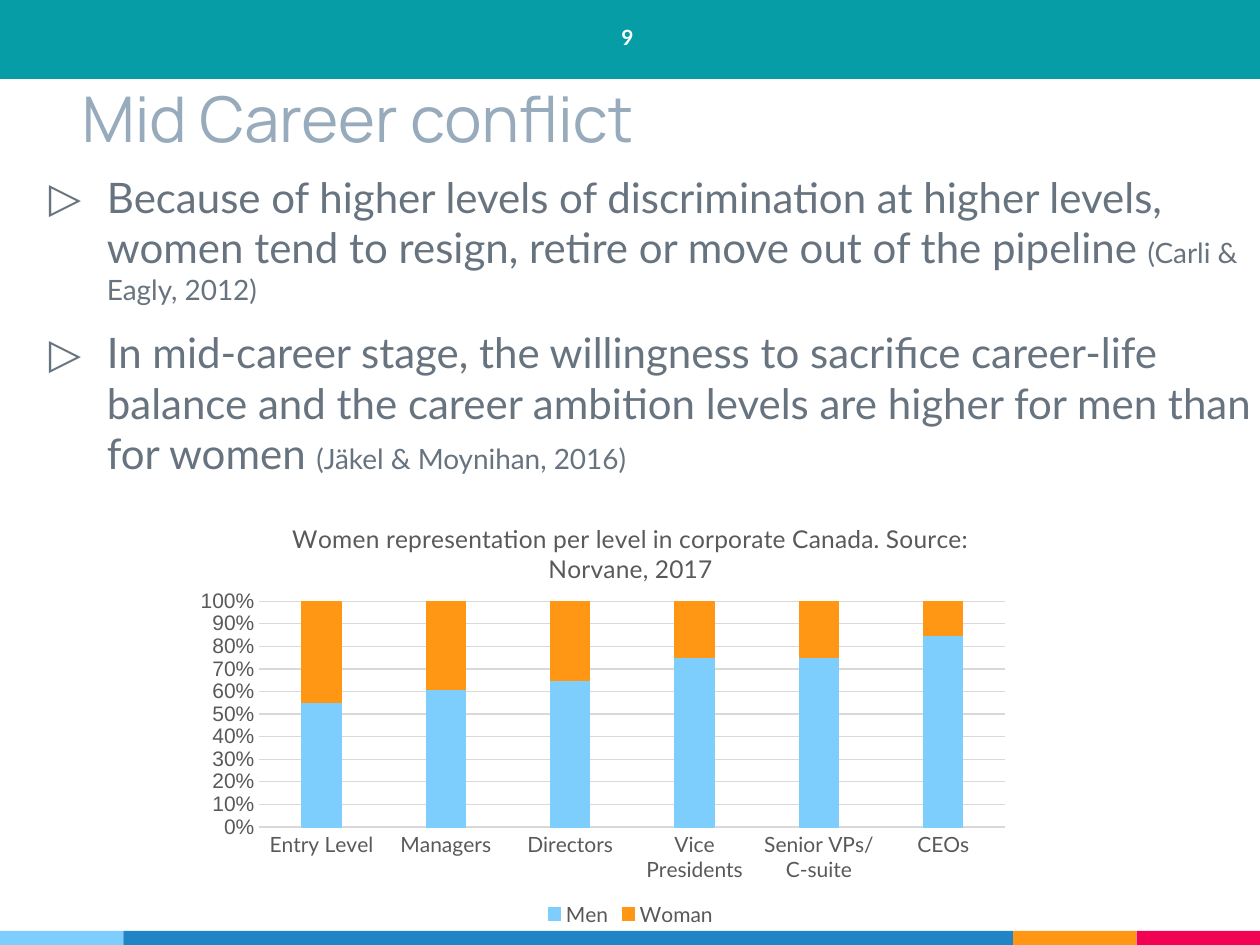
from dataclasses import dataclass

from lxml import etree
from pptx import Presentation
from pptx.chart.data import CategoryChartData
from pptx.dml.color import RGBColor
from pptx.enum import chart as charts, shapes, text
from pptx.oxml import ns
from pptx.util import Emu, Inches, Pt

WIDTH, HEIGHT = Inches(10), Inches(7.5)

TEAL = RGBColor(0x06, 0x9D, 0xA6)
SKY = RGBColor(0x7E, 0xCE, 0xFD)
BLUE = RGBColor(0x21, 0x85, 0xC5)
ORANGE = RGBColor(0xFF, 0x97, 0x15)
RED = RGBColor(0xF2, 0x02, 0x53)
HEADING = RGBColor(0x97, 0xAB, 0xBC)
SLATE = RGBColor(0x67, 0x74, 0x80)
GREY = RGBColor(0x59, 0x59, 0x59)
GRID = RGBColor(0xD9, 0xD9, 0xD9)
WHITE = RGBColor(0xFF, 0xFF, 0xFF)


@dataclass(frozen=True)
class Area:
    """A rectangle in shares of the slide's width and height."""
    left: float
    top: float
    width: float
    height: float

    def box(self) -> tuple[Emu, ...]:
        return (Emu(int(self.left * WIDTH)), Emu(int(self.top * HEIGHT)),
                Emu(int(self.width * WIDTH)), Emu(int(self.height * HEIGHT)))


@dataclass(frozen=True)
class Stripe:
    share: float
    color: RGBColor


@dataclass(frozen=True)
class Point:
    claim: str
    citation: str


@dataclass(frozen=True)
class Series:
    name: str
    values: tuple[float, ...]
    color: RGBColor


HEADER = Area(0, 0, 1, 0.083)
PAGE_NUMBER = Area(0.445, 0.019, 0.106, 0.04)
TITLE = Area(0.055, 0.071, 0.836, 0.107)
BODY = Area(0.025, 0.168, 1.015, 0.47)
CHART = Area(0.134, 0.53, 0.733, 0.456)
STRIPE_TOP = 0.985

STRIPES = [Stripe(0.098, SKY), Stripe(0.706, BLUE),
           Stripe(0.098, ORANGE), Stripe(0.098, RED)]

POINTS = [
    Point("Because of higher levels of discrimination at higher levels, women "
          "tend to resign, retire or move out of the pipeline ",
          "(Carli & Eagly, 2012)"),
    Point("In mid-career stage, the willingness to sacrifice career-life balance "
          "and the career ambition levels are higher for men than for women ",
          "(Jäkel & Moynihan, 2016)"),
]

LEVELS = ["Entry Level", "Managers", "Directors", "Vice Presidents",
          "Senior VPs/ C-suite", "CEOs"]
MEN = (0.55, 0.61, 0.65, 0.75, 0.75, 0.85)
SERIES = [Series("Men", MEN, SKY),
          Series("Woman", tuple(round(1 - men, 2) for men in MEN), ORANGE)]
CHART_TITLE = ("Women representation per level in corporate Canada. "
               "Source: Norvane, 2017")
PLOT = {"x": 0.098, "y": 0.233, "w": 0.808, "h": 0.524}


def set_font(font, size: float, color: RGBColor, name: str = "Lato",
             bold: bool = False) -> None:
    values = {"size": Pt(size), "name": name, "bold": bold}
    for attribute, value in values.items():
        setattr(font, attribute, value)
    font.color.rgb = color


def set_frame(frame, anchor) -> None:
    values = {"word_wrap": True, "vertical_anchor": anchor,
              "auto_size": text.MSO_AUTO_SIZE.NONE}
    values |= {f"margin_{side}": Inches(0.1)
               for side in ("left", "top", "right", "bottom")}
    for attribute, value in values.items():
        setattr(frame, attribute, value)


def add_run(paragraph, words: str, size: float, color: RGBColor,
            **style) -> None:
    run = paragraph.add_run()
    run.text = words
    set_font(run.font, size, color, **style)


def add_block(slide, area: Area, color: RGBColor, outlined: bool = False) -> None:
    block = slide.shapes.add_shape(shapes.MSO_SHAPE.RECTANGLE, *area.box())
    block.shadow.inherit = False
    block.fill.solid()
    block.fill.fore_color.rgb = color
    if outlined:
        set_line(block.line, color)
    else:
        block.line.fill.background()


def set_line(line, color: RGBColor) -> None:
    line.color.rgb = color
    line.width = Pt(0.75)


def add_stripes(slide) -> None:
    left = 0.0
    for stripe in STRIPES:
        add_block(slide, Area(left, STRIPE_TOP, stripe.share, 1 - STRIPE_TOP),
                  stripe.color)
        left += stripe.share


def set_bullet(paragraph, mark: str, color: RGBColor) -> None:
    properties = paragraph._p.get_or_add_pPr()
    properties.set("marL", str(Inches(0.5)))
    properties.set("indent", str(Inches(-0.46)))
    tint = etree.SubElement(properties, ns.qn("a:buClr"))
    etree.SubElement(tint, ns.qn("a:srgbClr"), val=str(color))
    etree.SubElement(properties, ns.qn("a:buFont"), typeface="Lato")
    etree.SubElement(properties, ns.qn("a:buChar"), char=mark)


def add_points(slide) -> None:
    frame = slide.shapes.add_textbox(*BODY.box()).text_frame
    set_frame(frame, text.MSO_ANCHOR.TOP)
    for index, point in enumerate(POINTS):
        paragraph = frame.add_paragraph() if index else frame.paragraphs[0]
        paragraph.space_before = paragraph.space_after = Pt(6)
        set_bullet(paragraph, "▷", SLATE)
        add_run(paragraph, point.claim, 24, SLATE)
        add_run(paragraph, point.citation, 16, SLATE)


def place_plot(chart) -> None:
    """Fix the inner plot area in shares of the chart."""
    plot_area = chart._chartSpace.chart.plotArea
    for old in plot_area.findall(ns.qn("c:layout")):
        plot_area.remove(old)
    layout = etree.Element(ns.qn("c:layout"))
    manual = etree.SubElement(layout, ns.qn("c:manualLayout"))
    settings = {"layoutTarget": "inner", "xMode": "edge", "yMode": "edge", **PLOT}
    for tag, value in settings.items():
        etree.SubElement(manual, ns.qn(f"c:{tag}"), val=str(value))
    plot_area.insert(0, layout)


def add_level_chart(slide) -> None:
    data = CategoryChartData(number_format="0%")
    data.categories = LEVELS
    for series in SERIES:
        data.add_series(series.name, series.values)
    chart = slide.shapes.add_chart(charts.XL_CHART_TYPE.COLUMN_STACKED,
                                   *CHART.box(), data).chart
    set_font(chart.font, 10, GREY, "Arial")

    chart.has_title = True
    heading = chart.chart_title.text_frame.paragraphs[0]
    add_run(heading, CHART_TITLE, 14, GREY)
    chart.chart_title.include_in_layout = False

    chart.has_legend = True
    chart.legend.position = charts.XL_LEGEND_POSITION.BOTTOM
    chart.legend.include_in_layout = False
    set_font(chart.legend.font, 12, GREY)

    levels, shares = chart.category_axis, chart.value_axis
    for axis, font_name in ((levels, "Lato"), (shares, "Arial")):
        axis.major_tick_mark = axis.minor_tick_mark = charts.XL_TICK_MARK.NONE
        set_font(axis.tick_labels.font, 12, GREY, font_name)
    set_line(levels.format.line, GRID)
    scale = {"minimum_scale": 0, "maximum_scale": 1, "major_unit": 0.1,
             "has_major_gridlines": True}
    for attribute, value in scale.items():
        setattr(shares, attribute, value)
    shares.format.line.fill.background()
    set_line(shares.major_gridlines.format.line, GRID)
    shares.tick_labels.number_format = "0%"
    shares.tick_labels.number_format_is_linked = False

    plot = chart.plots[0]
    for attribute, value in {"gap_width": 219, "overlap": 100,
                             "vary_by_categories": False}.items():
        setattr(plot, attribute, value)
    for column, series in zip(plot.series, SERIES):
        column.format.fill.solid()
        column.format.fill.fore_color.rgb = series.color
        set_line(column.format.line, series.color)
    place_plot(chart)


def add_title(slide) -> None:
    title = slide.shapes.title
    title.left, title.top, title.width, title.height = TITLE.box()
    set_frame(title.text_frame, text.MSO_ANCHOR.BOTTOM)
    heading = title.text_frame.paragraphs[0]
    heading.alignment = text.PP_ALIGN.LEFT
    add_run(heading, "Mid Career conflict", 36, HEADING, name="Manrope")


def add_page_number(slide) -> None:
    frame = slide.shapes.add_textbox(*PAGE_NUMBER.box()).text_frame
    frame.word_wrap = True
    frame.paragraphs[0].alignment = text.PP_ALIGN.CENTER
    add_run(frame.paragraphs[0], "9", 12, WHITE, bold=True)


def main() -> None:
    deck = Presentation()
    deck.slide_width, deck.slide_height = WIDTH, HEIGHT
    slide = deck.slides.add_slide(deck.slide_layouts[5])
    add_stripes(slide)
    add_title(slide)
    add_points(slide)
    add_level_chart(slide)
    add_block(slide, HEADER, TEAL, outlined=True)
    add_page_number(slide)
    deck.save("out.pptx")


if __name__ == "__main__":
    main()
